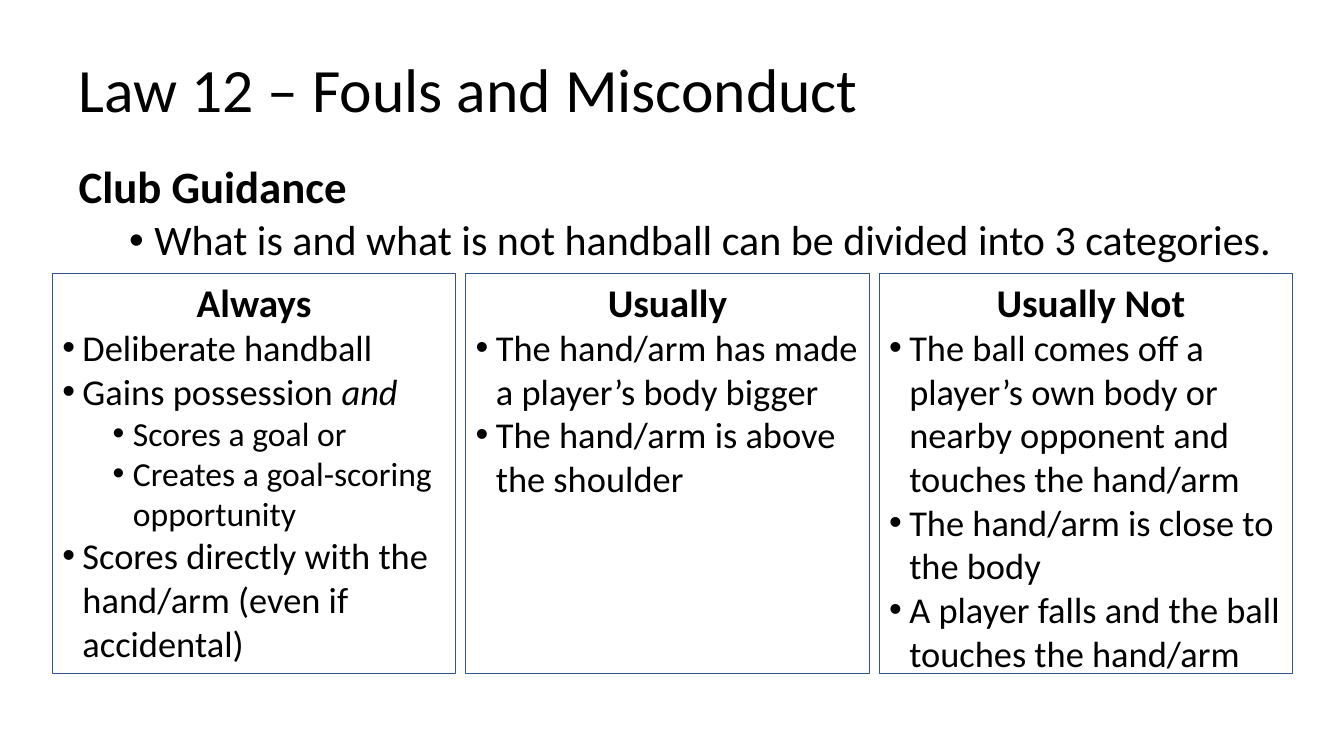
from dataclasses import dataclass

from lxml import etree
from pptx import Presentation
from pptx import util as u
from pptx.dml.color import RGBColor
from pptx.enum import shapes, text
from pptx.oxml import ns

BLACK = "000000"
EDGE = "325491"


@dataclass
class Run:
    text: str
    bold: bool = False
    ital: bool = False


@dataclass
class Para:
    runs: list[Run]
    size: float
    level: int = 0
    left: float = 0
    hang: float = 0
    line: float = 1
    before: float = 0
    align: text.PP_ALIGN = text.PP_ALIGN.LEFT


@dataclass
class Card:
    paras: list[Para]
    left: float
    width: float = 4
    inset: float = 0.1


def color(code: str) -> RGBColor:
    return RGBColor.from_string(code)


def head(word: str) -> Para:
    return Para([Run(word, bold=True)], 28, align=text.PP_ALIGN.CENTER)


def item(*runs: Run) -> Para:
    return Para(list(runs), 26, left=0.2, hang=0.2)


def sub(words: str) -> Para:
    return Para([Run(words)], 24, level=1, left=0.7, hang=0.2)


def place(shape, left: float, top: float, width: float, height: float) -> None:
    shape.left, shape.top = u.Inches(left), u.Inches(top)
    shape.width, shape.height = u.Inches(width), u.Inches(height)


def write(frame, paras: list[Para], anchor=text.MSO_ANCHOR.TOP) -> None:
    frame.word_wrap = True
    frame.auto_size = text.MSO_AUTO_SIZE.NONE
    frame.vertical_anchor = anchor
    for i, para in enumerate(paras):
        p = frame.paragraphs[0] if i == 0 else frame.add_paragraph()
        p.level, p.alignment = para.level, para.align
        p.line_spacing = para.line
        p.space_before, p.space_after = u.Pt(para.before), u.Pt(0)
        # Bullet and indent
        props = p._p.get_or_add_pPr()
        props.set("marL", str(u.Inches(para.left)))
        props.set("indent", str(-u.Inches(para.hang)))
        if para.hang:
            font = etree.SubElement(props, ns.qn("a:buFont"))
            font.set("typeface", "Arial")
            etree.SubElement(props, ns.qn("a:buChar")).set("char", "•")
        else:
            etree.SubElement(props, ns.qn("a:buNone"))
        for part in para.runs:
            run = p.add_run()
            run.text = part.text
            run.font.name, run.font.size = "Calibri", u.Pt(para.size)
            run.font.bold, run.font.italic = part.bold, part.ital
            run.font.color.rgb = color(BLACK)


def draw(slide, card: Card) -> None:
    box = slide.shapes.add_shape(
        shapes.MSO_SHAPE.RECTANGLE, u.Inches(card.left), u.Inches(2.71),
        u.Inches(card.width), u.Inches(3.97))
    box.shadow.inherit = False
    box.fill.background()
    box.line.color.rgb = color(EDGE)
    box.line.width = u.Pt(0.75)
    box.text_frame.margin_right = u.Inches(card.inset)
    write(box.text_frame, card.paras)


CARDS = [
    Card([
        head("Always"),
        item(Run("Deliberate handball")),
        item(Run("Gains possession "), Run("and", ital=True)),
        sub("Scores a goal or"),
        sub("Creates a goal-scoring opportunity"),
        item(Run("Scores directly with the hand/arm (even if accidental)")),
    ], 0.52),
    Card([
        head("Usually"),
        item(Run("The hand/arm has made a player’s body bigger")),
        item(Run("The hand/arm is above the shoulder")),
    ], 4.62),
    Card([
        head("Usually Not"),
        item(Run("The ball comes off a player’s own body or nearby opponent "
                 "and touches the hand/arm")),
        item(Run("The hand/arm is close to the body")),
        item(Run("A player falls and the ball touches the hand/arm")),
    ], 8.72, width=4.1, inset=0),
]


def main() -> None:
    deck = Presentation()
    deck.slide_width, deck.slide_height = u.Inches(13.33), u.Inches(7.5)
    slide = deck.slides.add_slide(deck.slide_layouts[1])

    # Title
    title = slide.shapes.title
    place(title, 0.68, 0.4, 12, 1.03)
    write(title.text_frame,
          [Para([Run("Law 12 – Fouls and Misconduct")], 44, line=0.9)],
          text.MSO_ANCHOR.MIDDLE)

    # Guidance
    body = slide.placeholders[1]
    place(body, 0.68, 1.58, 12.1, 3.97)
    write(body.text_frame, [
        Para([Run("Club Guidance", bold=True)], 32, line=0.9),
        Para([Run("What is and what is not handball can be divided into "
                  "3 categories.")],
             30, level=1, left=0.75, hang=0.25, line=0.9, before=5),
    ])

    # Categories
    for card in CARDS:
        draw(slide, card)

    deck.save("out.pptx")


if __name__ == "__main__":
    main()
